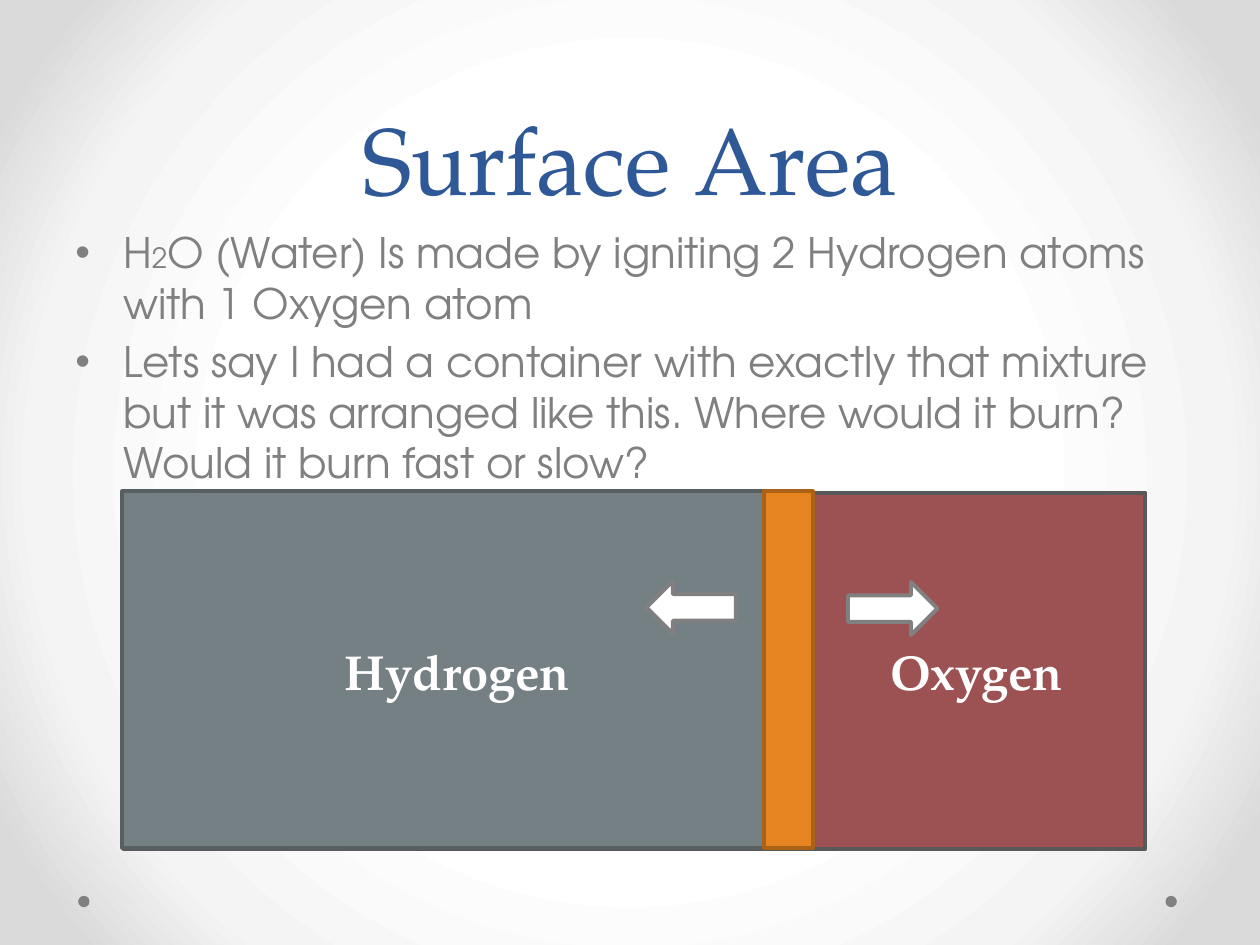
from dataclasses import dataclass
from typing import Any, Optional

from lxml import etree
from pptx import Presentation, util as u
from pptx.dml.color import RGBColor
from pptx.enum import shapes, text
from pptx.oxml.ns import qn

COLORS = {
    "title": "2F5897", "gray": "808080", "white": "FFFFFF",
    "hydrogen": "758085", "hydrogen_edge": "575F62",
    "oxygen": "9C5252", "oxygen_edge": "595959",
    "flame": "E68422", "flame_edge": "AA6219",
}
BACKDROP_STOPS = ((50, "FFFFFF"), (76, "F4F4F4"), (92, "DADADA"))
SANS, SERIF = "TeX Gyre Adventor", "TeX Gyre Pagella"
TITLE_FONT = {"name": SERIF, "size": u.Pt(54)}
BODY_FONT = {"name": SANS, "size": u.Pt(24)}
LABEL_FONT = {"name": SERIF, "size": u.Pt(28), "bold": True}
CENTERED = {"alignment": text.PP_ALIGN.CENTER}


@dataclass(frozen=True)
class Area:
    left: float
    top: float
    width: float
    height: float

    def lengths(self) -> list[u.Length]:
        return [u.Inches(n) for n in (self.left, self.top, self.width, self.height)]


@dataclass(frozen=True)
class Block:
    area: Area
    fill: str
    edge: Optional[str] = None
    kind: Any = shapes.MSO_SHAPE.RECTANGLE
    rotation: float = 0


def rgb(name: str) -> RGBColor:
    return RGBColor.from_string(COLORS[name])


def apply(target: Any, values: dict[str, Any]) -> None:
    for name, value in values.items():
        setattr(target, name, value)


def paint_backdrop(page: Any) -> None:
    """Fill the page with a gradient that spreads in circles from the centre."""
    page.background.fill.gradient()
    gradient = page.element.find(".//" + qn("a:gradFill"))
    for child in list(gradient):
        gradient.remove(child)
    stops = etree.SubElement(gradient, qn("a:gsLst"))
    for position, color in BACKDROP_STOPS:
        stop = etree.SubElement(stops, qn("a:gs"), pos=str(position * 1000))
        etree.SubElement(stop, qn("a:srgbClr"), val=color)
    circle = etree.SubElement(gradient, qn("a:path"), path="circle")
    etree.SubElement(circle, qn("a:fillToRect"), l="50000", t="50000", r="50000", b="50000")


def draw_block(page: Any, block: Block) -> None:
    shape = page.shapes.add_shape(block.kind, *block.area.lengths())
    shape.shadow.inherit = False
    shape.rotation = block.rotation
    shape.fill.solid()
    shape.fill.fore_color.rgb = rgb(block.fill)
    if block.edge:
        shape.line.color.rgb = rgb(block.edge)
        shape.line.width = u.Pt(2.25)
    else:
        shape.line.fill.background()


def add_box(page: Any, area: Area, anchor: Any = text.MSO_ANCHOR.TOP) -> Any:
    frame = page.shapes.add_textbox(*area.lengths()).text_frame
    apply(frame, {"word_wrap": True, "vertical_anchor": anchor})
    return frame


def add_span(para: Any, words: str, font: dict[str, Any], color: str) -> None:
    span = para.add_run()
    span.text = words
    apply(span.font, font)
    span.font.color.rgb = rgb(color)


def add_bullet(para: Any) -> None:
    indent = u.Inches(0.38)
    properties = para._p.get_or_add_pPr()
    properties.set("marL", str(indent))
    properties.set("indent", str(-indent))
    etree.SubElement(properties, qn("a:buFont"), typeface="Arial")
    etree.SubElement(properties, qn("a:buChar"), char="•")


def draw_label(page: Any, words: str, left: float) -> None:
    para = add_box(page, Area(left, 5.04, 3.46, 0.57)).paragraphs[0]
    apply(para, CENTERED)
    add_span(para, words, LABEL_FONT, "white")


def draw_bullets(page: Any) -> None:
    small = {**BODY_FONT, "size": u.Pt(16)}
    bullets = (
        (("H", BODY_FONT), ("2", small),
         ("O (Water) Is made by igniting 2 Hydrogen atoms with 1 Oxygen atom", BODY_FONT)),
        (("Lets say I had a container with exactly that mixture but it was arranged "
          "like this. Where would it burn? Would it burn fast or slow?", BODY_FONT),),
    )
    frame = add_box(page, Area(0.5, 1.75, 9, 4.95))
    for index, spans in enumerate(bullets):
        para = frame.add_paragraph() if index else frame.paragraphs[0]
        add_bullet(para)
        if index:
            para.space_before = u.Pt(4.8)
        for words, font in spans:
            add_span(para, words, font, "gray")


def main() -> None:
    deck = Presentation()
    apply(deck, {"slide_width": u.Inches(10), "slide_height": u.Inches(7.5)})
    page = deck.slides.add_slide(deck.slide_layouts[6])
    paint_backdrop(page)

    # Corner dots
    for left in (9.25, 0.62):
        draw_block(page, Block(Area(left, 7.11, 0.09, 0.09), "gray",
                               kind=shapes.MSO_SHAPE.OVAL))

    # Title and bullets
    title = add_box(page, Area(0.5, 0, 9, 1.75), text.MSO_ANCHOR.BOTTOM).paragraphs[0]
    apply(title, {**CENTERED, "line_spacing": u.Pt(58)})
    add_span(title, "Surface Area", TITLE_FONT, "title")
    draw_bullets(page)

    # Container with its two gases
    draw_block(page, Block(Area(0.98, 3.91, 8.11, 2.83), "oxygen", "oxygen_edge"))
    draw_block(page, Block(Area(0.97, 3.9, 5.29, 2.83), "hydrogen", "hydrogen_edge"))
    draw_label(page, "Hydrogen", 1.9)
    draw_label(page, "Oxygen", 6.02)

    # Burning boundary, spreading both ways
    draw_block(page, Block(Area(6.06, 3.9, 0.39, 2.83), "flame", "flame_edge"))
    for left, top, rotation in ((6.73, 4.62, 0), (5.13, 4.61, 180)):
        draw_block(page, Block(Area(left, top, 0.71, 0.42), "white", "gray",
                               shapes.MSO_SHAPE.RIGHT_ARROW, rotation))

    deck.save("out.pptx")


if __name__ == "__main__":
    main()
